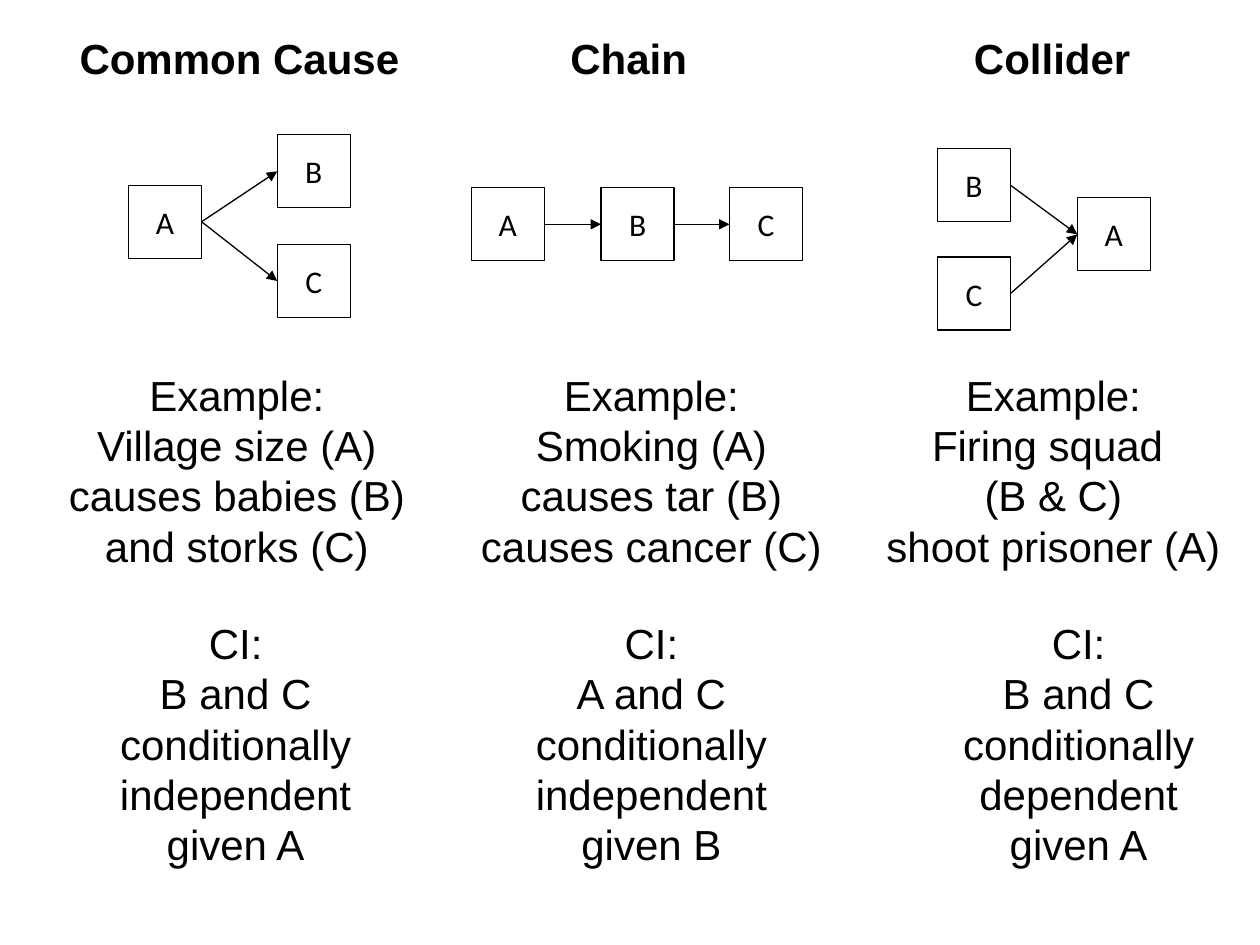
"""Build a slide comparing three causal structures: common cause, chain and collider."""
from dataclasses import dataclass

from lxml.etree import SubElement
from pptx import Presentation
from pptx.dml.color import RGBColor
from pptx.enum.shapes import MSO_CONNECTOR, MSO_SHAPE
from pptx.enum.text import MSO_ANCHOR, MSO_AUTO_SIZE, PP_ALIGN
from pptx.oxml.ns import qn
from pptx.util import Inches, Pt


@dataclass(frozen=True)
class Theme:
    ink: RGBColor = RGBColor(0, 0, 0)
    body: str = "Arial"
    label: str = "Calibri"
    large: int = 24
    small: int = 18
    line: float = 0.75


THEME = Theme()
WIDTH, HEIGHT = 10, 7.5
SIDE = 0.58
ROWS = [(0.21, 0.51), (2.88, 1.72), (4.85, 2.12)]

COLUMNS = [
    {
        "texts": [
            (1.9, 2.77, ["Common Cause"]),
            (1.88, 2.9, ["Example:", "Village size (A)", "causes babies (B)", "and storks (C)"]),
            (1.87, 2.08, ["CI:", "B and C", "conditionally ", "independent", "given A"]),
        ],
        "nodes": {"A": (1.02, 1.47), "B": (2.2, 1.07), "C": (2.2, 1.94)},
        "links": ["AB", "AC"],
    },
    {
        "texts": [
            (4.99, 1.14, ["Chain"]),
            (5.17, 2.93, ["Example:", "Smoking (A)", "causes tar (B)", "causes cancer (C)"]),
            (5.17, 2.08, ["CI:", "A and C", "conditionally ", "independent", "given B"]),
        ],
        "nodes": {"A": (3.74, 1.49), "B": (4.77, 1.49), "C": (5.79, 1.49)},
        "links": ["AB", "BC"],
    },
    {
        "texts": [
            (8.35, 1.45, ["Collider"]),
            (8.36, 2.88, ["Example:", "Firing squad ", "(B & C)", "shoot prisoner (A)"]),
            (8.56, 2.08, ["CI:", "B and C", "conditionally ", "dependent", "given A"]),
        ],
        "nodes": {"A": (8.55, 1.57), "B": (7.44, 1.18), "C": (7.44, 2.04)},
        "links": ["BA", "CA"],
    },
]


def write(shape, lines, face, size, bold=False):
    frame = shape.text_frame
    frame.word_wrap = False
    frame.text = "\n".join(lines)
    for para in frame.paragraphs:
        para.alignment = PP_ALIGN.CENTER
        for run in para.runs:
            run.font.name = face
            run.font.size = Pt(size)
            run.font.bold = bold
            run.font.color.rgb = THEME.ink
    return frame


def stroke(shape):
    shape.line.color.rgb = THEME.ink
    shape.line.width = Pt(THEME.line)


def add_node(shapes, name, left, top):
    node = shapes.add_shape(MSO_SHAPE.RECTANGLE, *map(Inches, (left, top, SIDE, SIDE)))
    node.shadow.inherit = False
    node.fill.background()
    stroke(node)
    write(node, [name], THEME.label, THEME.small).vertical_anchor = MSO_ANCHOR.MIDDLE
    return node


def add_arrow(shapes, start, end):
    arrow = shapes.add_connector(MSO_CONNECTOR.STRAIGHT, 0, 0, 0, 0)
    arrow.begin_connect(start, 3)
    arrow.end_connect(end, 1)
    stroke(arrow)
    SubElement(arrow.line._get_or_add_ln(), qn("a:tailEnd"), type="triangle")
    SubElement(arrow._element.spPr, qn("a:effectLst"))


def add_block(shapes, mid, top, width, height, lines, bold):
    box = shapes.add_textbox(*map(Inches, (mid - width / 2, top, width, height)))
    frame = write(box, lines, THEME.body, THEME.large, bold)
    frame.auto_size = MSO_AUTO_SIZE.SHAPE_TO_FIT_TEXT


def main():
    deck = Presentation()
    deck.slide_width, deck.slide_height = Inches(WIDTH), Inches(HEIGHT)
    shapes = deck.slides.add_slide(deck.slide_layouts[6]).shapes
    for column in COLUMNS:
        nodes = {name: add_node(shapes, name, *spot) for name, spot in column["nodes"].items()}
        for start, end in column["links"]:
            add_arrow(shapes, nodes[start], nodes[end])
        for row, (mid, width, lines) in enumerate(column["texts"]):
            top, height = ROWS[row]
            add_block(shapes, mid, top, width, height, lines, row == 0)
    deck.save("out.pptx")


if __name__ == "__main__":
    main()
